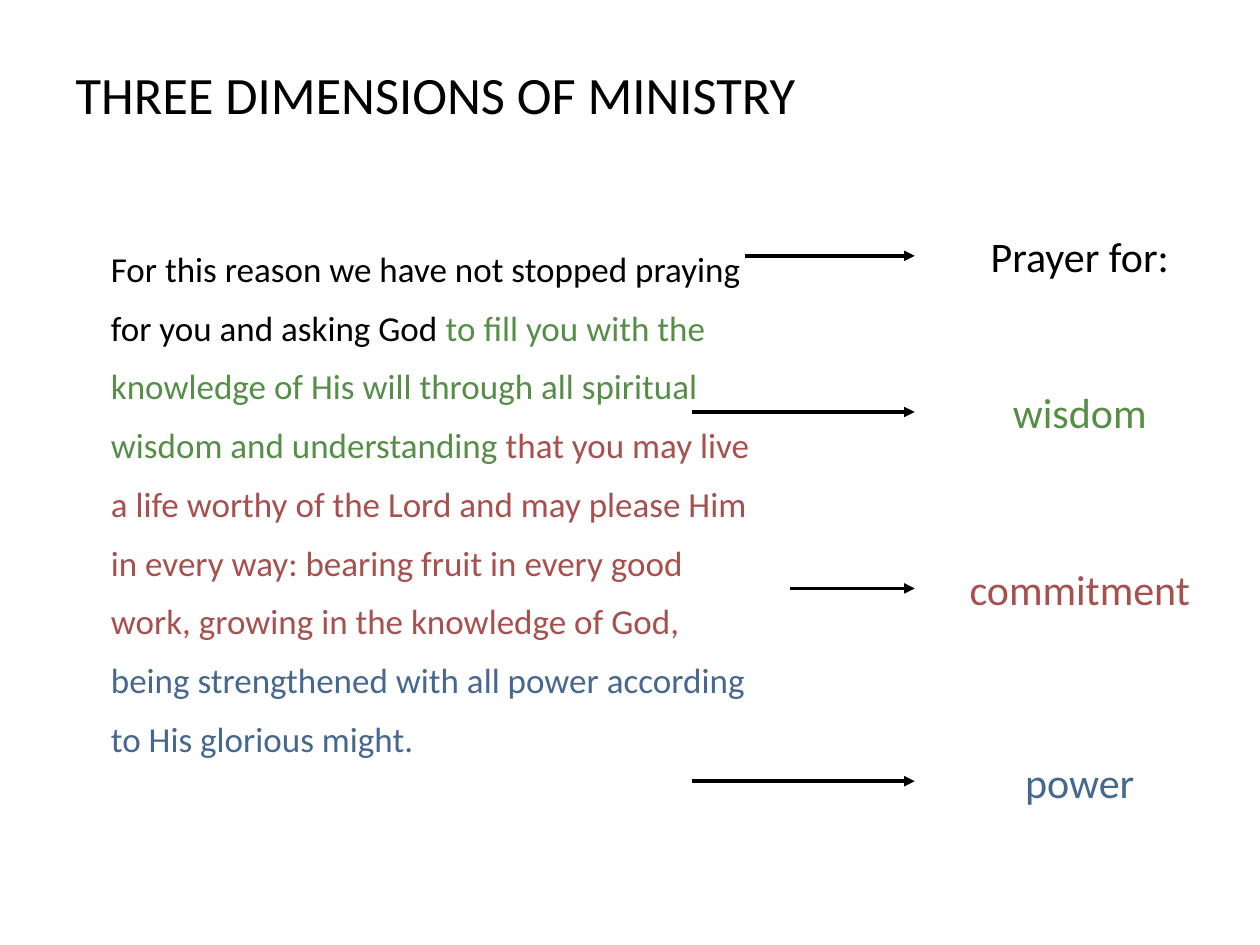
from lxml.etree import SubElement
from pptx import Presentation
from pptx.dml.color import RGBColor
from pptx.enum.shapes import MSO_CONNECTOR as Connector
from pptx.enum.text import MSO_ANCHOR as Anchor, MSO_AUTO_SIZE as AutoSize, PP_ALIGN as Align
from pptx.oxml.ns import qn
from pptx.util import Inches, Pt

BLACK = RGBColor(0x00, 0x00, 0x00)
GREEN = RGBColor(0x56, 0x8E, 0x48)
RED = RGBColor(0xA7, 0x50, 0x4D)
BLUE = RGBColor(0x46, 0x67, 0x8F)

PASSAGE = [
    ("For this reason we have not stopped praying for you and asking God ", BLACK),
    ("to fill you with the knowledge of His will through all spiritual wisdom and understanding ", GREEN),
    ("that you may live a life worthy of the Lord and may please Him in every way: "
     "bearing fruit in every good work, growing in the knowledge of God, ", RED),
    ("being strengthened with all power according to His glorious might.", BLUE),
]

PRAYERS = [
    ("Prayer for:", BLACK, 2.03, 5.91),
    ("wisdom", GREEN, 3.27, 5.49),
    ("commitment", RED, 4.67, 6.27),
    ("power", BLUE, 6.2, 5.49),
]
ARROW_END = 7.26
LABEL_LEFT, LABEL_WIDTH, LABEL_HEIGHT = 7.4, 2.34, 0.52


class MinistrySlide:
    font_name = "Calibri"
    inset = Inches(0.05)
    arrow_width = Pt(2)

    def __init__(self, slide):
        self.slide = slide

    def text(self, left, top, width, height, runs, size, frame_format=None, paragraph_format=None):
        box = self.slide.shapes.add_textbox(Inches(left), Inches(top), Inches(width), Inches(height))
        frame = box.text_frame
        margins = {f"margin_{side}": self.inset for side in ("left", "top", "right", "bottom")}
        frame_values = {"word_wrap": True, **margins, **(frame_format or {})}
        for name, value in frame_values.items():
            setattr(frame, name, value)
        paragraph = frame.paragraphs[0]
        for name, value in (paragraph_format or {}).items():
            setattr(paragraph, name, value)
        for words, color in runs:
            run = paragraph.add_run()
            run.text = words
            for name, value in {"name": self.font_name, "size": Pt(size)}.items():
                setattr(run.font, name, value)
            run.font.color.rgb = color

    def arrow(self, start, end, y):
        arrow = self.slide.shapes.add_connector(
            Connector.STRAIGHT, Inches(start), Inches(y), Inches(end), Inches(y))
        arrow.line.color.rgb = BLACK
        arrow.line.width = self.arrow_width
        SubElement(arrow.line._get_or_add_ln(), qn("a:tailEnd"), type="triangle")
        SubElement(arrow._element.spPr, qn("a:effectLst"))


def main():
    deck = Presentation()
    deck.slide_width, deck.slide_height = Inches(10), Inches(7.5)
    ministry = MinistrySlide(deck.slides.add_slide(deck.slide_layouts[6]))

    ministry.text(0.55, 0.15, 7.36, 1.19, [("THREE DIMENSIONS OF MINISTRY", BLACK)], 30,
                  {"vertical_anchor": Anchor.MIDDLE})
    ministry.text(0.83, 1.78, 5.28, 4.82, PASSAGE, 20,
                  {"auto_size": AutoSize.SHAPE_TO_FIT_TEXT}, {"line_spacing": 1.4})

    label_frame = {"vertical_anchor": Anchor.MIDDLE, "auto_size": AutoSize.SHAPE_TO_FIT_TEXT}
    for label, color, y, arrow_start in PRAYERS:
        ministry.arrow(arrow_start, ARROW_END, y)
        ministry.text(LABEL_LEFT, y - LABEL_HEIGHT / 2, LABEL_WIDTH, LABEL_HEIGHT,
                      [(label, color)], 24, label_frame, {"alignment": Align.CENTER})

    deck.save("out.pptx")


if __name__ == "__main__":
    main()
